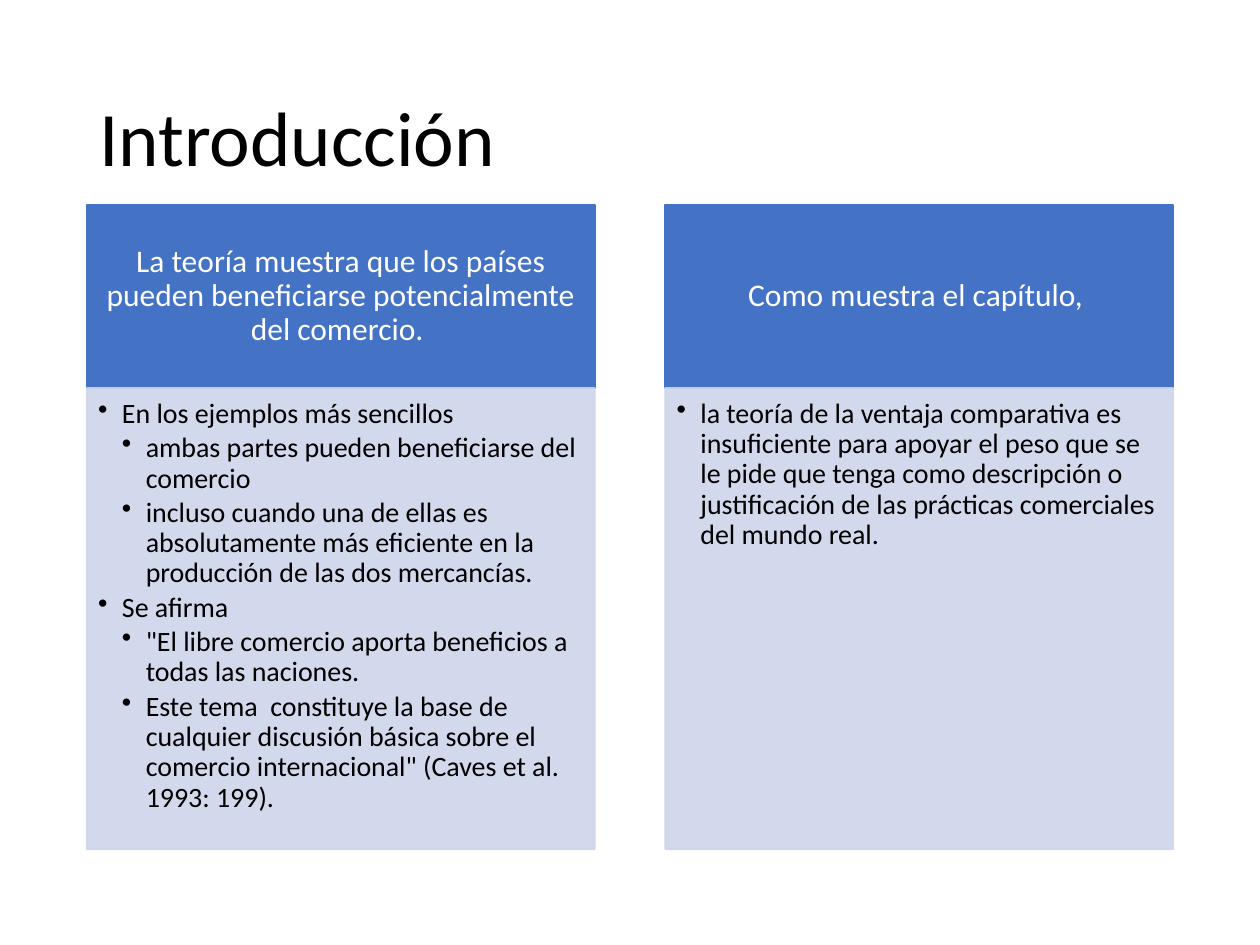
import pptx
import pptx.util
import pptx.dml.color
import pptx.enum.shapes
import pptx.enum.text
import pptx.oxml.ns
import lxml.etree

Cm = pptx.util.Cm
Align = pptx.enum.text.PP_ALIGN
Anchor = pptx.enum.text.MSO_ANCHOR
COLORS = {"header": "4472C4", "body": "CFD5EA", "light": "FFFFFF", "dark": "000000"}
INDENT = 0.48


def rgb(name):
    return pptx.dml.color.RGBColor.from_string(COLORS[name])


def write(frame, lines, size, color="dark", align=Align.LEFT, anchor=Anchor.TOP,
          insets=(0.25, 0.13, 0.25, 0.13), after=0, bullets=False):
    """Fill a text frame with (level, text) lines."""
    frame.word_wrap = True
    frame.auto_size = pptx.enum.text.MSO_AUTO_SIZE.NONE
    frame.vertical_anchor = anchor
    (frame.margin_left, frame.margin_top,
     frame.margin_right, frame.margin_bottom) = map(Cm, insets)
    for index, (level, text) in enumerate(lines):
        para = frame.add_paragraph() if index else frame.paragraphs[0]
        para.alignment = align
        para.level = level
        para.line_spacing = 0.9
        para.space_after = pptx.util.Pt(after)
        if bullets:
            props = para._p.get_or_add_pPr()
            props.set("marL", str(Cm(INDENT * (level + 1))))
            props.set("indent", str(-Cm(INDENT)))
            lxml.etree.SubElement(props, pptx.oxml.ns.qn("a:buChar"), char="•")
        span = para.add_run()
        span.text = text
        span.font.name = "Calibri"
        span.font.size = pptx.util.Pt(size)
        span.font.color.rgb = rgb(color)


deck = pptx.Presentation()
deck.slide_width, deck.slide_height = Cm(25.4), Cm(19.05)
page = deck.slides.add_slide(deck.slide_layouts[5])

# Title
title = page.shapes.title
title.left, title.top, title.width, title.height = Cm(1.75), Cm(1.02), Cm(21.9), Cm(3.68)
write(title.text_frame, [(0, "Introducción")], 44, anchor=Anchor.MIDDLE)

# Two columns: a header above a bulleted body
columns = [
    ("La teoría muestra que los países pueden beneficiarse potencialmente del comercio. ", [
        (0, "En los ejemplos más sencillos"),
        (1, "ambas partes pueden beneficiarse del comercio"),
        (1, "incluso cuando una de ellas es absolutamente más eficiente en la "
            "producción de las dos mercancías."),
        (0, "Se afirma"),
        (1, '"El libre comercio aporta beneficios a todas las naciones.'),
        (1, "Este tema  constituye la base de cualquier discusión básica sobre el "
            'comercio internacional" (Caves et al. 1993: 199).'),
    ]),
    ("Como muestra el capítulo, ", [
        (0, "la teoría de la ventaja comparativa es insuficiente para apoyar el peso "
            "que se le pide que tenga como descripción o justificación de las "
            "prácticas comerciales del mundo real."),
    ]),
]
for column, (heading, points) in enumerate(columns):
    boxes = {}
    for part, top, height in (("header", 4.14, 3.68), ("body", 7.82, 9.3)):
        box = page.shapes.add_shape(
            pptx.enum.shapes.MSO_SHAPE.RECTANGLE,
            Cm(1.75 + 11.66 * column), Cm(top), Cm(10.24), Cm(height))
        box.shadow.inherit = False
        box.fill.solid()
        box.fill.fore_color.rgb = rgb(part)
        box.line.color.rgb = rgb(part)
        box.line.width = pptx.util.Pt(1)
        boxes[part] = box

    # Body fill and outline are slightly transparent
    for color in boxes["body"]._element.spPr.iter(pptx.oxml.ns.qn("a:srgbClr")):
        lxml.etree.SubElement(color, pptx.oxml.ns.qn("a:alpha"), val="90000")

    write(boxes["header"].text_frame, [(0, heading)], 18, color="light",
          align=Align.CENTER, anchor=Anchor.MIDDLE, insets=(0.36, 0.2, 0.36, 0.2))
    write(boxes["body"].text_frame, points, 16, insets=(0.23, 0.23, 0.3, 0.36),
          after=2.4, bullets=True)

deck.save("out.pptx")
